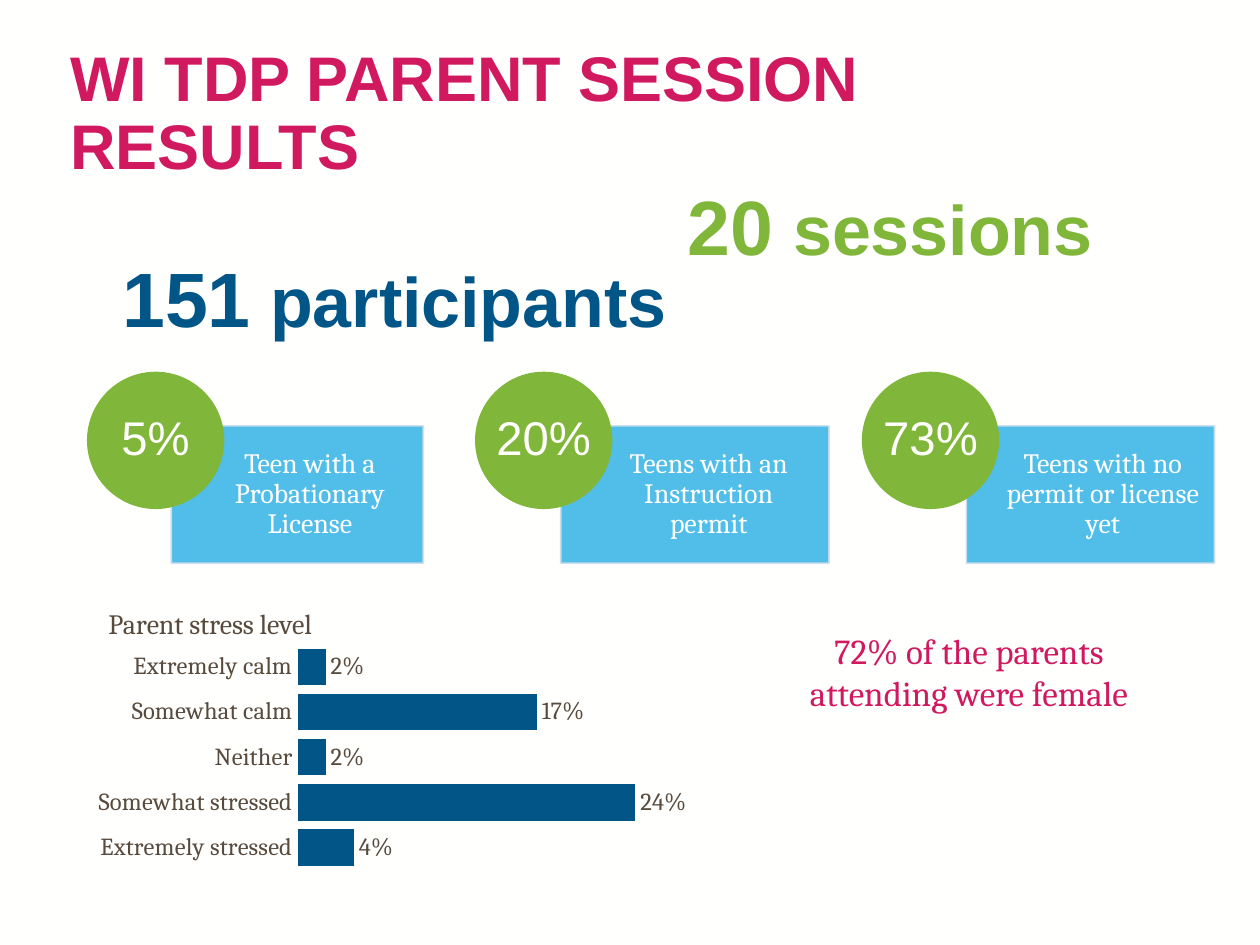
from lxml import etree
from pptx import Presentation, util as u
from pptx.chart.data import CategoryChartData
from pptx.dml.color import RGBColor
from pptx.enum import chart as ch, shapes, text
from pptx.oxml import parse_xml
from pptx.oxml.ns import nsdecls, qn

# Content
TITLE = "WI TDP PARENT SESSION RESULTS"
# number, label, color, (left, top, width, height)
TOTALS = [
    ("151", "participants", "blue", (0.84, 1.94, 4.58, 0.84)),
    ("20", "sessions", "green", (5.34, 1.37, 3.45, 0.84)),
]
# share, label, circle left, box left, box width
GROUPS = [
    ("5%", "Teen with a Probationary License", 0.69, 1.36, 2.0),
    ("20%", "Teens with an Instruction permit", 3.77, 4.45, 2.13),
    ("73%", "Teens with no permit or license yet", 6.84, 7.67, 1.97),
]
FEMALE = "72% of the parents attending were female"
STRESS_TITLE = "Parent stress level"
STRESS = [
    ("Extremely stressed", 0.04),
    ("Somewhat stressed", 0.24),
    ("Neither", 0.02),
    ("Somewhat calm", 0.17),
    ("Extremely calm", 0.02),
]

THEME = {
    "color": {"white": "FFFFFE", "pink": "D11960", "blue": "025587", "green": "80B639",
              "sky": "3FB8E7", "edge": "CEDEEB", "brown": "584B3D"},
    "size": {"title": 36, "number": 44, "unit": 40, "share": 27, "female": 20,
             "label": 16, "chart_title": 16, "chart": 14},
    "head": "Arial", "body": "Cambria",
}
CIRCLE, CIRCLE_TOP, BOX_TOP = 1.09, 2.95, 3.38


def rgb(name):
    return RGBColor.from_string(THEME["color"][name])


def style(font, size, color, face, bold=None):
    font.size, font.name, font.bold = u.Pt(THEME["size"][size]), THEME[face], bold
    font.color.rgb = rgb(color)


def set_alpha(fill_parent, percent):
    clr = fill_parent.find(qn("a:solidFill"))[0]
    etree.SubElement(clr, qn("a:alpha")).set("val", str(percent * 1000))


def add_text(s, box, anchor=text.MSO_ANCHOR.TOP, wrap=True):
    tf = s.shapes.add_textbox(*map(u.Inches, box)).text_frame
    tf.word_wrap, tf.vertical_anchor = wrap, anchor
    return tf


def add_block(s, preset, box, fill, label, size, face, insets):
    sp = s.shapes.add_shape(preset, *map(u.Inches, box))
    sp.shadow.inherit = False
    sp.fill.solid()
    sp.fill.fore_color.rgb = rgb(fill)
    sp.line.fill.background()
    tf = sp.text_frame
    tf.word_wrap, tf.vertical_anchor = True, text.MSO_ANCHOR.MIDDLE
    tf.margin_left, tf.margin_top, tf.margin_right, tf.margin_bottom = map(u.Inches, insets)
    p = tf.paragraphs[0]
    p.text, p.alignment, p.line_spacing = label, text.PP_ALIGN.CENTER, 0.9
    style(p.font, size, "white", face)
    return sp


def add_layout(parent, index, **values):
    old = parent.find(qn("c:layout"))
    if old is not None:
        parent.remove(old)
    items = "".join(f'<c:{k} val="{v}"/>' for k, v in values.items())
    parent.insert(index, parse_xml(
        f'<c:layout {nsdecls("c")}><c:manualLayout>{items}</c:manualLayout></c:layout>'))


def add_stress_chart(s):
    data = CategoryChartData(number_format="0%")
    data.categories = [name for name, _ in STRESS]
    data.add_series("Series 1", [value for _, value in STRESS])
    chart = s.shapes.add_chart(ch.XL_CHART_TYPE.BAR_CLUSTERED,
                               *map(u.Inches, (0.5, 4.7, 5.32, 2.3)), data).chart
    style(chart.font, "chart", "brown", "body")
    chart.has_legend = False

    # Chart title and plot area
    p = chart.chart_title.text_frame.paragraphs[0]
    p.text = STRESS_TITLE
    style(p.font, "chart_title", "brown", "body", False)
    add_layout(chart.chart_title._element, 1, xMode="edge", yMode="edge", x=0.06, y=0.03)
    add_layout(chart._chartSpace.chart.plotArea, 0, layoutTarget="inner", xMode="edge",
               yMode="edge", x=0.35, y=0.18, w=0.63, h=0.78)

    # Axes
    cat, val = chart.category_axis, chart.value_axis
    for axis in (cat, val):
        axis.major_tick_mark = axis.minor_tick_mark = ch.XL_TICK_MARK.NONE
        axis.has_major_gridlines = False
    cat.format.line.color.rgb = rgb("white")
    cat.format.line.width = u.Pt(0.75)
    val.minimum_scale, val.maximum_scale = 0, 0.3
    val.tick_label_position = ch.XL_TICK_LABEL_POSITION.NONE
    val.format.line.fill.background()

    # Bars and their values
    plot = chart.plots[0]
    plot.gap_width, plot.overlap, plot.vary_by_categories = 24, 13, False
    fill = plot.series[0].format.fill
    fill.solid()
    fill.fore_color.rgb = rgb("blue")
    plot.has_data_labels = True
    labels = plot.data_labels
    labels.show_value, labels.position = True, ch.XL_LABEL_POSITION.OUTSIDE_END
    labels.number_format, labels.number_format_is_linked = "0%", False
    style(labels.font, "chart", "brown", "body")


def main():
    prs = Presentation()
    prs.slide_width, prs.slide_height = u.Inches(10), u.Inches(7.5)
    s = prs.slides.add_slide(prs.slide_layouts[6])
    s.background.fill.solid()
    s.background.fill.fore_color.rgb = rgb("white")

    # Title
    p = add_text(s, (0.46, 0.19, 8.62, 1.45), text.MSO_ANCHOR.MIDDLE).paragraphs[0]
    p.text, p.line_spacing = TITLE, 0.9
    style(p.font, "title", "pink", "head", True)

    # Teen groups: box with a circle over its corner
    for share, label, circle_left, left, width in GROUPS:
        box = add_block(s, shapes.MSO_SHAPE.RECTANGLE, (left, BOX_TOP, width, CIRCLE), "sky",
                        label, "label", "body", (0.16 * width, 0.12, 0.12, 0.12))
        box.line.color.rgb, box.line.width = rgb("edge"), u.Pt(1)
        set_alpha(box._element.spPr, 90)
        set_alpha(box.line._ln, 90)
        add_block(s, shapes.MSO_SHAPE.OVAL, (circle_left, CIRCLE_TOP, CIRCLE, CIRCLE), "green",
                  share, "share", "head", (0, 0, 0, 0))

    # Share of female parents
    p = add_text(s, (6.27, 4.95, 2.84, 1.11)).paragraphs[0]
    p.text, p.alignment = FEMALE, text.PP_ALIGN.CENTER
    style(p.font, "female", "pink", "body")

    # Totals
    for number, unit, color, box in TOTALS:
        p = add_text(s, box, wrap=False).paragraphs[0]
        p.alignment = text.PP_ALIGN.CENTER
        for words, size in ((number, "number"), (" " + unit, "unit")):
            r = p.add_run()
            r.text = words
            style(r.font, size, color, "head", True)

    add_stress_chart(s)
    prs.save("out.pptx")


if __name__ == "__main__":
    main()
